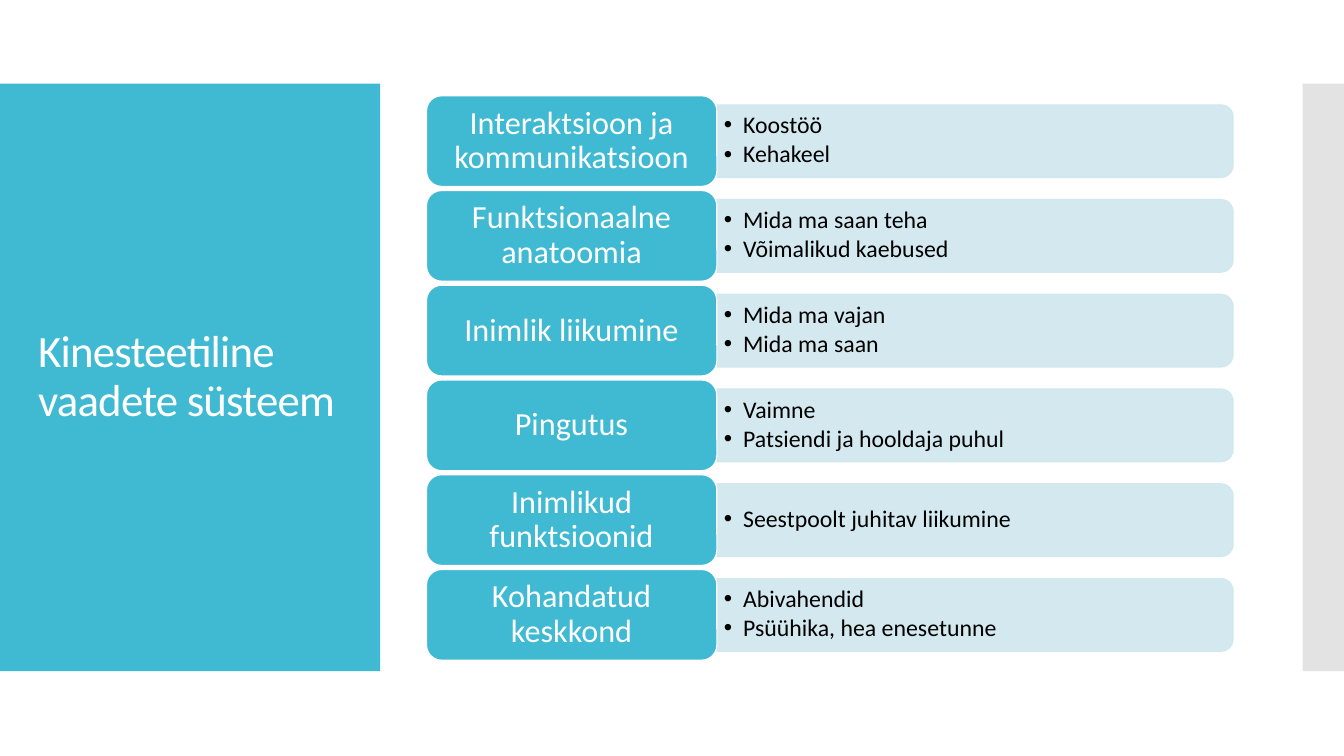
from lxml.etree import SubElement as Sub
from pptx import Presentation
from pptx.dml.color import RGBColor as Rgb
from pptx.enum.shapes import MSO_SHAPE as Geo
from pptx.enum.text import MSO_ANCHOR as Anchor, PP_ALIGN as Align
from pptx.oxml.ns import qn
from pptx.util import Inches, Pt

FONT = "Calibri"
HUES = {"teal": "40BAD2", "pale": "CFE7EE", "grey": "C8C8C8",
        "white": "FFFFFF", "black": "000000"}
TITLE = "Kinesteetiline vaadete süsteem"
ROWS = [
    ("Interaktsioon ja kommunikatsioon", ["Koostöö", "Kehakeel"]),
    ("Funktsionaalne anatoomia", ["Mida ma saan teha", "Võimalikud kaebused"]),
    ("Inimlik liikumine", ["Mida ma vajan", "Mida ma saan"]),
    ("Pingutus", ["Vaimne", "Patsiendi ja hooldaja puhul"]),
    ("Inimlikud funktsioonid", ["Seestpoolt juhitav liikumine"]),
    ("Kohandatud keskkond", ["Abivahendid", "Psüühika, hea enesetunne"]),
]


def paint(fill, hue, solid=100):
    fill.solid()
    fill.fore_color.rgb = Rgb.from_string(HUES[hue])
    if solid < 100:
        tint = fill._xPr.find(qn("a:solidFill"))[0]
        Sub(tint, qn("a:alpha"), val=str(solid * 1000))


def draw(slide, kind, box, hue, edge=None, solid=100):
    shape = slide.shapes.add_shape(kind, *map(Inches, box))
    shape.shadow.inherit = False
    paint(shape.fill, hue, solid)
    if edge:
        shape.line.width = Pt(0.85)
        paint(shape.line.fill, edge, solid)
    else:
        shape.line.fill.background()
    return shape


def setup(shape, side, top):
    frame = shape.text_frame
    frame.word_wrap = True
    frame.vertical_anchor = Anchor.MIDDLE
    frame.margin_left = frame.margin_right = Inches(side)
    frame.margin_top = frame.margin_bottom = Inches(top)
    return frame


def write(para, text, size, hue, align=Align.LEFT, after=0):
    para.alignment = align
    para.line_spacing = 0.9
    para.space_after = Pt(after)
    run = para.add_run()
    run.text = text
    run.font.size = Pt(size)
    run.font.name = FONT
    run.font.color.rgb = Rgb.from_string(HUES[hue])
    return run


def add_title(slide, box):
    x, y, w, h = box
    draw(slide, Geo.RECTANGLE, box, "teal")
    area = (x + 0.28, y + 0.4, w - 0.55, h - 0.8)
    frame = setup(slide.shapes.add_textbox(*map(Inches, area)), 0.1, 0.05)
    run = write(frame.paragraphs[0], TITLE, 32, "white")
    run.font._element.set("spc", "-60")


def add_points(slide, box, points):
    frame = setup(slide.shapes.add_textbox(*map(Inches, box)), 0.07, 0.04)
    for i, point in enumerate(points):
        para = frame.add_paragraph() if i else frame.paragraphs[0]
        write(para, point, 17, "black", after=2.5)
        props = para._p.get_or_add_pPr()
        props.set("marL", str(Inches(0.19)))
        props.set("indent", str(-Inches(0.19)))
        Sub(props, qn("a:buFont"), typeface="Arial")
        Sub(props, qn("a:buChar"), char="•")


def add_row(slide, box, name, points):
    x, y, w, h = box
    lead, thick = 2.88, 0.72
    span = w - lead
    mid = x + lead + span / 2
    bar = draw(slide, Geo.ROUND_2_SAME_RECTANGLE,
               (mid - thick / 2, y + h / 2 - span / 2, thick, span),
               "pale", "pale", 90)
    bar.rotation = 90
    add_points(slide, (x + lead, y + 0.12, span - 0.03, 0.65), points)
    label = draw(slide, Geo.ROUNDED_RECTANGLE, (x, y, lead, h), "teal", "white")
    frame = setup(label, 0.14, 0.09)
    write(frame.paragraphs[0], name, 23, "white", Align.CENTER)


def add_list(slide, box):
    x, y, w, h = box
    tall = 0.9
    step = (h - tall) / (len(ROWS) - 1)
    for i, (name, points) in enumerate(ROWS):
        add_row(slide, (x, y + i * step, w, tall), name, points)


def main():
    deck = Presentation()
    deck.slide_width, deck.slide_height = Inches(13.33), Inches(7.5)
    slide = deck.slides.add_slide(deck.slide_layouts[6])
    add_title(slide, (0, 0.83, 3.77, 5.83))
    draw(slide, Geo.RECTANGLE, (12.92, 0.83, 0.41, 5.83), "grey", solid=50)
    add_list(slide, (4.23, 0.95, 8, 5.6))
    deck.save("out.pptx")


if __name__ == "__main__":
    main()
